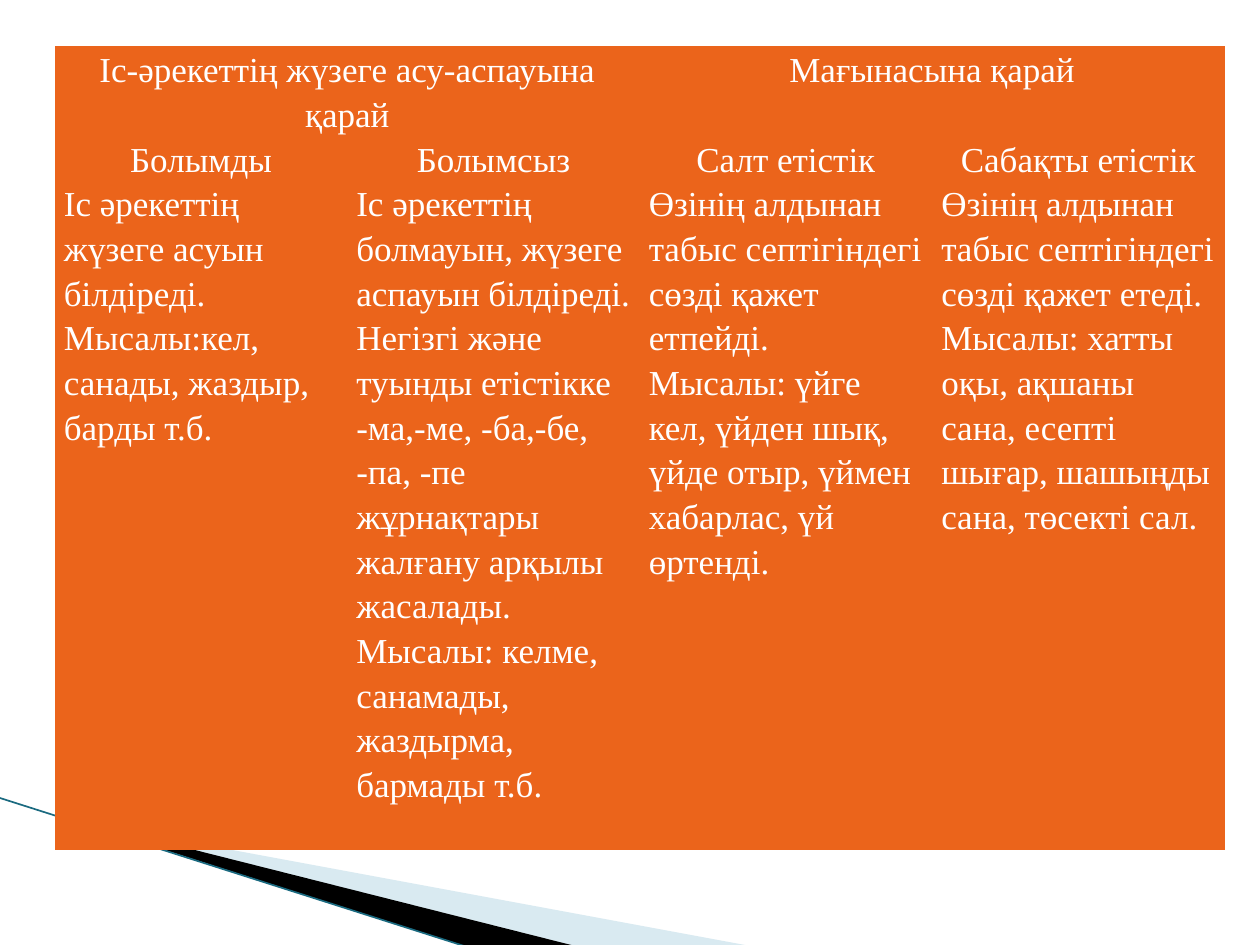
from lxml import etree
from pptx import Presentation
from pptx.dml.color import RGBColor
from pptx.enum import shapes, text
from pptx.oxml import ns
from pptx.util import Pt

COLORS = {"cell": "EB641B", "text": "FFFFFF", "pale": "A0CBDC",
          "dark": "000000", "edge": "1A6A80"}
NO_STYLE_NO_GRID = "{2D5ABB26-0587-4C30-8999-92F81FD0307C}"


def rgb(name):
    return RGBColor.from_string(COLORS[name])


def add_wedge(points, color):
    """Draw a closed, unlined polygon from points in pt."""
    corners = [(Pt(x), Pt(y)) for x, y in points]
    builder = slide.shapes.build_freeform(*corners[0])
    builder.add_line_segments(corners[1:], close=True)
    wedge = builder.convert_to_shape()
    wedge.shadow.inherit = False
    wedge.fill.solid()
    wedge.fill.fore_color.rgb = rgb(color)
    wedge.line.fill.background()
    return wedge


prs = Presentation()
prs.slide_width, prs.slide_height = Pt(720), Pt(540)
slide = prs.slides.add_slide(prs.slide_layouts[6])

# Decoration in the lower left corner
pale_wedge = add_wedge([(39.6, 468.5), (428.4, 540.5), (328.3, 540.5), (39.6, 468)], "pale")
pale_color = pale_wedge.fill._xPr.find(".//" + ns.qn("a:srgbClr"))
etree.SubElement(pale_color, ns.qn("a:alpha"), val="40000")
add_wedge([(38.2, 467.3), (329, 540.7), (267.8, 541.4), (38.9, 468)], "dark")

edge = slide.shapes.add_connector(shapes.MSO_CONNECTOR.STRAIGHT,
                                  Pt(-0.7), Pt(455.8), Pt(267.8), Pt(541.4))
edge.line.color.rgb = rgb("edge")
edge.line.width = Pt(0.95)
etree.SubElement(edge._element.spPr, ns.qn("a:effectLst"))

# Verb classification table
groups = ["Іс-әрекеттің жүзеге асу-аспауына қарай", "", "Мағынасына қарай", ""]
kinds = ["Болымды", "Болымсыз", "Салт етістік", "Сабақты етістік"]
descriptions = [
    "Іс әрекеттің жүзеге асуын білдіреді.\n"
    "Мысалы:кел, санады, жаздыр, барды т.б.",
    "Іс әрекеттің болмауын, жүзеге аспауын білдіреді.\n"
    "Негізгі және туынды етістікке -ма,-ме, -ба,-бе, -па, -пе "
    "жұрнақтары жалғану арқылы жасалады.\n"
    "Мысалы: келме, санамады, жаздырма, бармады т.б.",
    "Өзінің алдынан табыс септігіндегі сөзді қажет етпейді.\n"
    "Мысалы: үйге кел, үйден шық, үйде отыр, үймен хабарлас, үй өртенді.",
    "Өзінің алдынан табыс септігіндегі сөзді қажет етеді.\n"
    "Мысалы: хатты оқы, ақшаны сана, есепті шығар, шашыңды сана, төсекті сал.",
]
rows = [groups, kinds, descriptions]
row_heights = [51, 25.5, 383]

verbs = slide.shapes.add_table(3, 4, Pt(31.3), Pt(26.2), Pt(668.6),
                               Pt(sum(row_heights))).table
verbs.first_row = verbs.horz_banding = False
verbs._tbl.tblPr.find(ns.qn("a:tableStyleId")).text = NO_STYLE_NO_GRID
for column in verbs.columns:
    column.width = Pt(167.15)
for first in (0, 2):
    verbs.cell(0, first).merge(verbs.cell(0, first + 1))

for r, (row, height) in enumerate(zip(rows, row_heights)):
    verbs.rows[r].height = Pt(height)
    for c, wording in enumerate(row):
        cell = verbs.cell(r, c)
        cell.fill.solid()
        cell.fill.fore_color.rgb = rgb("cell")
        cell.margin_left = cell.margin_right = Pt(5.2)
        cell.margin_top = cell.margin_bottom = 0
        if cell.is_spanned:
            continue
        cell.text_frame.text = wording
        for paragraph in cell.text_frame.paragraphs:
            paragraph.line_spacing = 1.15
            if r < 2:
                paragraph.alignment = text.PP_ALIGN.CENTER
            for run in paragraph.runs:
                run.font.name = "Times New Roman"
                run.font.size = Pt(20)
                run.font.color.rgb = rgb("text")

prs.save("out.pptx")
